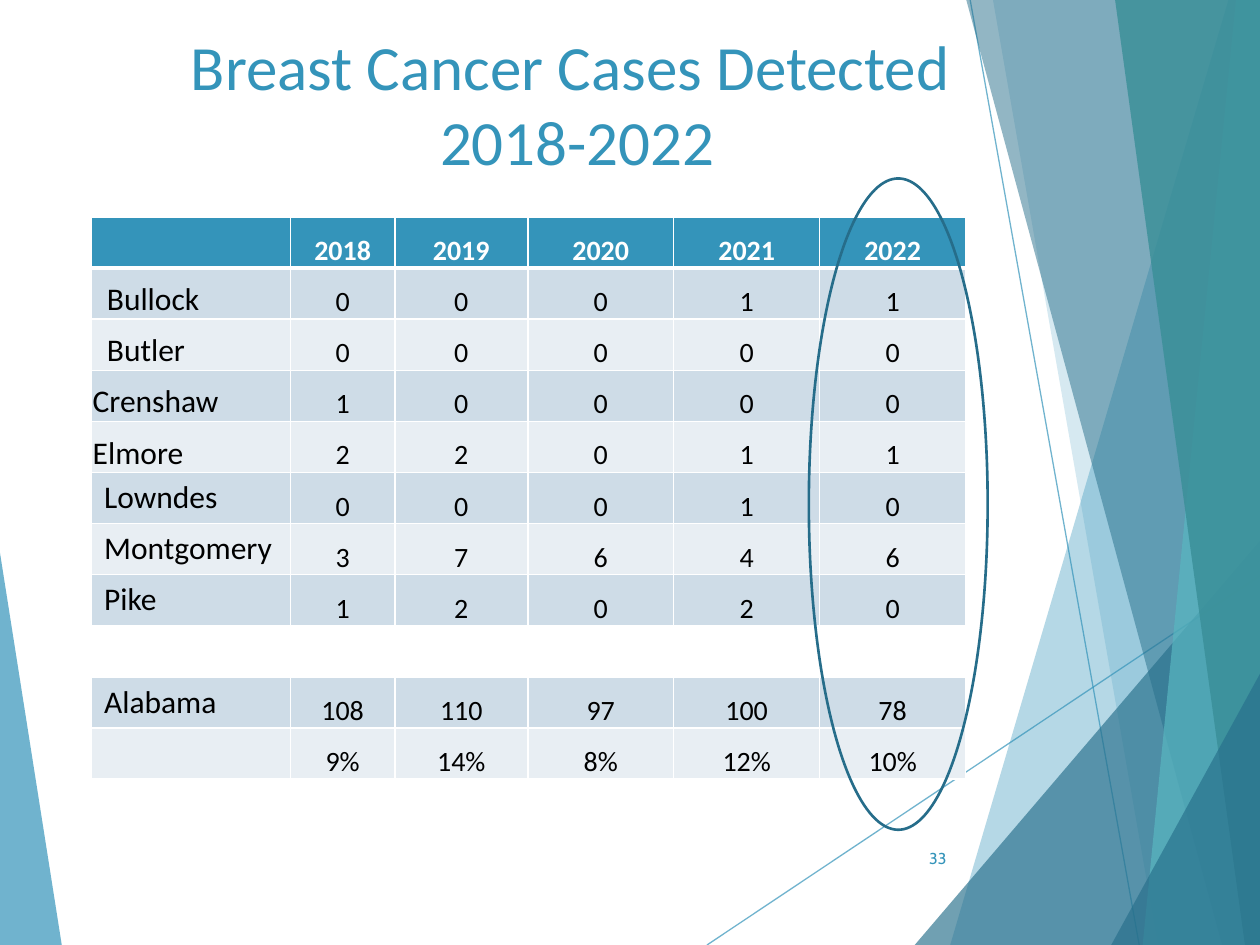
from copy import deepcopy
from dataclasses import dataclass

from pptx import Presentation
from pptx.dml.color import RGBColor
from pptx.enum.shapes import MSO_CONNECTOR, MSO_SHAPE
from pptx.enum.text import MSO_ANCHOR, PP_ALIGN
from pptx.oxml import parse_xml
from pptx.oxml.ns import nsdecls, qn
from pptx.oxml.xmlchemy import OxmlElement
from pptx.util import Pt

WIDE, HIGH = 720, 540
Point = tuple[float, float]


@dataclass(frozen=True)
class Theme:
    blue: str = "3494BA"
    deep: str = "276F8B"
    aqua: str = "58B6C0"
    teal: str = "3A8F98"
    ring: str = "266D8A"
    dark: str = "CEDCE7"
    light: str = "E8EEF3"
    white: str = "FFFFFF"
    black: str = "000000"
    font: str = "Calibri"
    foot: str = "Cabin"
    title: float = 36
    name: float = 18
    value: float = 16
    number: float = 9


THEME = Theme()


@dataclass(frozen=True)
class Facet:
    points: tuple[Point, ...]
    color: str
    alpha: int


@dataclass(frozen=True)
class Ray:
    start: Point
    end: Point


@dataclass(frozen=True)
class County:
    name: str
    values: tuple[str, ...]
    indent: float = 0.7
    top: bool = False


def slab(top: float, foot: float) -> tuple[Point, ...]:
    """Area between a slanted edge and the right side of the slide."""
    return (top, 0), (foot, HIGH), (WIDE, HIGH), (WIDE, 0)


def wedge(foot: float, side: float) -> tuple[Point, ...]:
    """Triangle in the lower right corner."""
    return (foot, HIGH), (WIDE, side), (WIDE, HIGH)


LEFT = Facet(((0, 316), (35.3, HIGH), (0, HIGH)), THEME.blue, 70)
RAYS = (Ray((404, HIGH), (WIDE, 329)), Ray((554.4, 0), (651, HIGH)))
FACETS = (
    Facet(slab(702, 543), THEME.blue, 36),
    Facet(slab(567.4, 661.7), THEME.blue, 20),
    Facet(wedge(522.7, 309), THEME.deep, 66),
    Facet(slab(552.2, 698.4), THEME.deep, 50),
    Facet(slab(706.3, 653), THEME.aqua, 70),
    Facet(slab(637.2, 711.4), THEME.teal, 82),
    Facet(wedge(635, 385), THEME.deep, 66),
)

YEARS = ("2018", "2019", "2020", "2021", "2022")
BLANK = County("", ("",) * len(YEARS))
ROWS = (
    County("", YEARS),
    County("Bullock", ("0", "0", "0", "1", "1"), indent=8.8),
    County("Butler", ("0", "0", "0", "0", "0"), indent=8.8),
    County("Crenshaw", ("1", "0", "0", "0", "0")),
    County("Elmore", ("2", "2", "0", "1", "1")),
    County("Lowndes", ("0", "0", "0", "1", "0"), indent=7.2, top=True),
    County("Montgomery", ("3", "7", "6", "4", "6"), indent=7.2, top=True),
    County("Pike", ("1", "2", "0", "2", "0"), indent=7.2, top=True),
    BLANK,
    County("Alabama", ("108", "110", "97", "100", "78"), indent=7.2, top=True),
    County("", ("9%", "14%", "8%", "12%", "10%")),
)
COLS = (113.7, 59.6, 76, 83.4, 83.4, 83.4)
STEP = 29.2


def paint(fill, color: str, alpha: int = 100) -> None:
    fill.solid()
    fill.fore_color.rgb = RGBColor.from_string(color)
    if alpha < 100:
        node = OxmlElement("a:alpha")
        node.set("val", str(alpha * 1000))
        fill._xPr.find(qn("a:solidFill"))[0].append(node)


def style(frame, size: float, color: str, align=PP_ALIGN.LEFT,
          font: str = THEME.font, bold: bool = False) -> None:
    for para in frame.paragraphs:
        para.alignment = align
        for run in para.runs:
            run.font.name, run.font.size, run.font.bold = font, Pt(size), bold
            run.font.color.rgb = RGBColor.from_string(color)


def draw_facet(shapes, facet: Facet) -> None:
    points = [(Pt(x), Pt(y)) for x, y in facet.points]
    form = shapes.build_freeform(*points[0], scale=1.0)
    form.add_line_segments(points[1:], close=True)
    shape = form.convert_to_shape()
    shape.shadow.inherit = False
    paint(shape.fill, facet.color, facet.alpha)
    shape.line.fill.background()


def draw_ray(shapes, ray: Ray) -> None:
    ends = [Pt(n) for n in ray.start + ray.end]
    line = shapes.add_connector(MSO_CONNECTOR.STRAIGHT, *ends)
    line.line.width = Pt(0.75)
    paint(line.line.fill, THEME.blue, 70)
    line._element.spPr.append(OxmlElement("a:effectLst"))


def draw_title(slide) -> None:
    title = slide.shapes.title
    title.left, title.top, title.width, title.height = map(Pt, (48, 12, 564, 108))
    frame = title.text_frame
    frame.text = "Breast Cancer Cases Detected \v2018-2022"
    frame.vertical_anchor = MSO_ANCHOR.TOP
    style(frame, THEME.title, THEME.blue, PP_ALIGN.CENTER)
    para = frame.paragraphs[0]
    # The line break needs the run format too, or it sets the line height.
    para._p.find(qn("a:br")).append(deepcopy(para.runs[0]._r.rPr))


def edge(cell, above: float, below: float) -> None:
    """Give the cell white borders; above and below are line widths."""
    sides = {"lnL": 1, "lnR": 1, "lnT": above, "lnB": below}
    for spot, (tag, width) in enumerate(sides.items()):
        cell._tc.get_or_add_tcPr().insert(spot, parse_xml(
            f'<a:{tag} {nsdecls("a")} w="{Pt(width)}"><a:solidFill>'
            f'<a:srgbClr val="{THEME.white}"/></a:solidFill></a:{tag}>'))


def draw_cell(cell, row: int, col: int) -> None:
    county = ROWS[row]
    head, first = row == 0, col == 0
    if county is BLANK:
        cell.fill.background()
    else:
        band = THEME.dark if row % 2 else THEME.light
        paint(cell.fill, THEME.blue if head else band)
    edge(cell, 3 if row == 1 else 1, 3 if head else 1)
    text = county.name if first else county.values[col - 1]
    if not text:
        return
    cell.text_frame.text = text
    if first and county.top:
        cell.vertical_anchor = MSO_ANCHOR.TOP
    else:
        cell.vertical_anchor = MSO_ANCHOR.BOTTOM
        cell.margin_right = cell.margin_top = Pt(0.7)
        cell.margin_bottom = Pt(0)
    cell.margin_left = Pt(county.indent if first else 0.7)
    style(cell.text_frame, THEME.name if first else THEME.value,
          THEME.white if head else THEME.black,
          PP_ALIGN.LEFT if first else PP_ALIGN.CENTER, bold=head)


def draw_table(shapes) -> None:
    table = shapes.add_table(len(ROWS), len(COLS), Pt(52.3), Pt(124),
                             Pt(sum(COLS)), Pt(STEP * len(ROWS))).table
    table.first_row = table.horz_banding = False
    for col, width in zip(table.columns, COLS):
        col.width = Pt(width)
    for r, row in enumerate(table.rows):
        row.height = Pt(STEP)
        for c, cell in enumerate(row.cells):
            draw_cell(cell, r, c)


def draw_number(shapes) -> None:
    box = shapes.add_textbox(Pt(507.6), Pt(476), Pt(40.3), Pt(28.8))
    frame = box.text_frame
    frame.word_wrap = True
    frame.vertical_anchor = MSO_ANCHOR.MIDDLE
    frame.text = "33"
    style(frame, THEME.number, THEME.blue, PP_ALIGN.RIGHT, THEME.foot)


def draw_ring(shapes) -> None:
    ring = shapes.add_shape(MSO_SHAPE.OVAL, Pt(462.2), Pt(102), Pt(102.2), Pt(372.2))
    ring.shadow.inherit = False
    ring.fill.background()
    ring.line.width = Pt(1.5)
    paint(ring.line.fill, THEME.ring)


def main() -> None:
    deck = Presentation()
    deck.slide_width, deck.slide_height = Pt(WIDE), Pt(HIGH)
    slide = deck.slides.add_slide(deck.slide_layouts[5])
    shapes = slide.shapes
    draw_facet(shapes, LEFT)
    for ray in RAYS:
        draw_ray(shapes, ray)
    for facet in FACETS:
        draw_facet(shapes, facet)
    draw_title(slide)
    draw_number(shapes)
    draw_table(shapes)
    draw_ring(shapes)
    deck.save("out.pptx")


if __name__ == "__main__":
    main()
